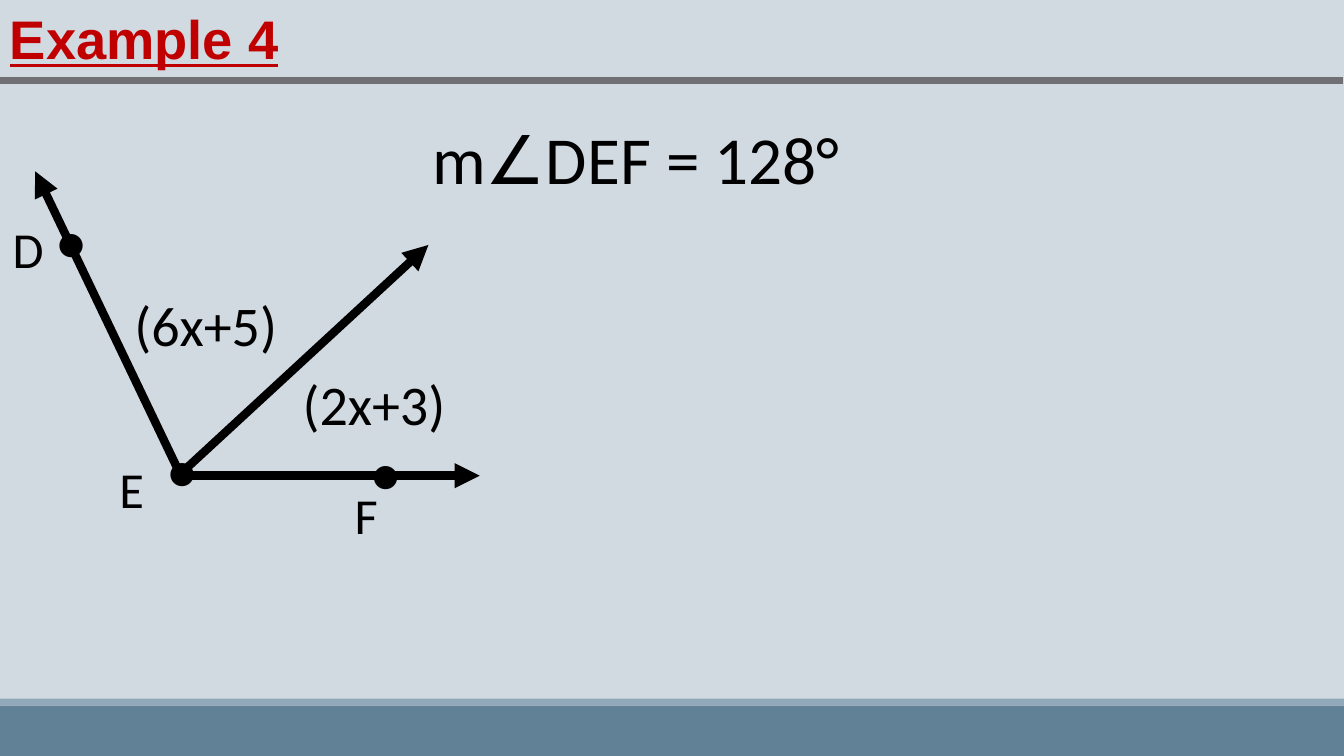
from lxml.etree import SubElement
from pptx import Presentation
from pptx.dml.color import RGBColor
from pptx.enum.shapes import MSO_CONNECTOR, MSO_SHAPE
from pptx.enum.text import MSO_ANCHOR, PP_ALIGN
from pptx.oxml.ns import qn
from pptx.util import Pt

WIDTH, HEIGHT = 960, 540


def color(code):
    return RGBColor.from_string(code)


def add_text(page, text, left, top, width, height, size=36, font="Calibri",
             code="000000", bold=False, underline=False,
             align=PP_ALIGN.CENTER, anchor=MSO_ANCHOR.TOP, wrap=False):
    box = page.shapes.add_textbox(Pt(left), Pt(top), Pt(width), Pt(height))
    frame = box.text_frame
    frame.word_wrap = wrap
    frame.vertical_anchor = anchor
    para = frame.paragraphs[0]
    para.alignment = align
    span = para.add_run()
    span.text = text
    span.font.size = Pt(size)
    span.font.name = font
    span.font.bold = bold
    span.font.underline = underline
    span.font.color.rgb = color(code)


def add_line(page, start, end, code, weight, arrow=False):
    line = page.shapes.add_connector(
        MSO_CONNECTOR.STRAIGHT, *(Pt(value) for value in (*start, *end)))
    line.line.color.rgb = color(code)
    line.line.width = Pt(weight)
    if arrow:
        SubElement(line.line._get_or_add_ln(), qn("a:tailEnd"), type="triangle")
    SubElement(line._element.spPr, qn("a:effectLst"))


def add_bar(page, top, height, code):
    bar = page.shapes.add_shape(
        MSO_SHAPE.RECTANGLE, 0, Pt(top), Pt(WIDTH), Pt(height))
    bar.shadow.inherit = False
    bar.fill.solid()
    bar.fill.fore_color.rgb = color(code)
    bar.line.fill.background()


def add_footer(page, top, height, stripe=5):
    add_bar(page, top + stripe, height - stripe, "618197")
    add_bar(page, top, stripe, "92A9B9")


def add_header(page, left, top, width, height):
    add_text(page, "Example 4", left, top, 705.6, height - 3.6, size=38.8,
             font="Arial", code="C00000", bold=True, underline=True,
             align=PP_ALIGN.LEFT, anchor=MSO_ANCHOR.BOTTOM, wrap=True)
    rule = top + height
    add_line(page, (left + width - 1, rule), (left - 1, rule), "6F6F74", 4.5)


def add_angle_diagram(page, left, top):
    """Draw angle DEF, its inner ray, its points and its measures."""
    rays = [((127.4, 259.8), (342.7, 259.8)),
            ((130.3, 262), (25.2, 42.4)),
            ((127.4, 259.8), (306, 95))]
    for ray in rays:
        start, end = ((left + x, top + y) for x, y in ray)
        add_line(page, start, end, "000000", 6, arrow=True)

    names = [("D", 0, 72.6, 40.3), ("E", 76.3, 244, 35.3), ("F", 244.8, 262, 33.8)]
    dots = [("●", x, y, 39.6) for x, y in ((31, 66.9), (110.2, 230.3), (255.6, 232.5))]
    for text, x, y, width in names + dots:
        add_text(page, text, left + x, top + y, width, 55.4)

    add_text(page, "(6x+5)", left + 82.8, top + 123.8, 128.2, 61.2, size=40)
    add_text(page, "(2x+3)", left + 202.3, top + 180.6, 129.6, 61.2, size=40, wrap=True)
    add_text(page, "m∠DEF = 128°", left + 287.3, top, 334, 71.3, size=48)


def main():
    deck = Presentation()
    deck.slide_width, deck.slide_height = Pt(WIDTH), Pt(HEIGHT)
    page = deck.slides.add_slide(deck.slide_layouts[6])
    page.background.fill.solid()
    page.background.fill.fore_color.rgb = color("D1D9E1")
    add_footer(page, 499, HEIGHT - 499)
    add_header(page, 0, 0, WIDTH, 57.6)
    add_angle_diagram(page, 0, 80)
    deck.save("out.pptx")


if __name__ == "__main__":
    main()
